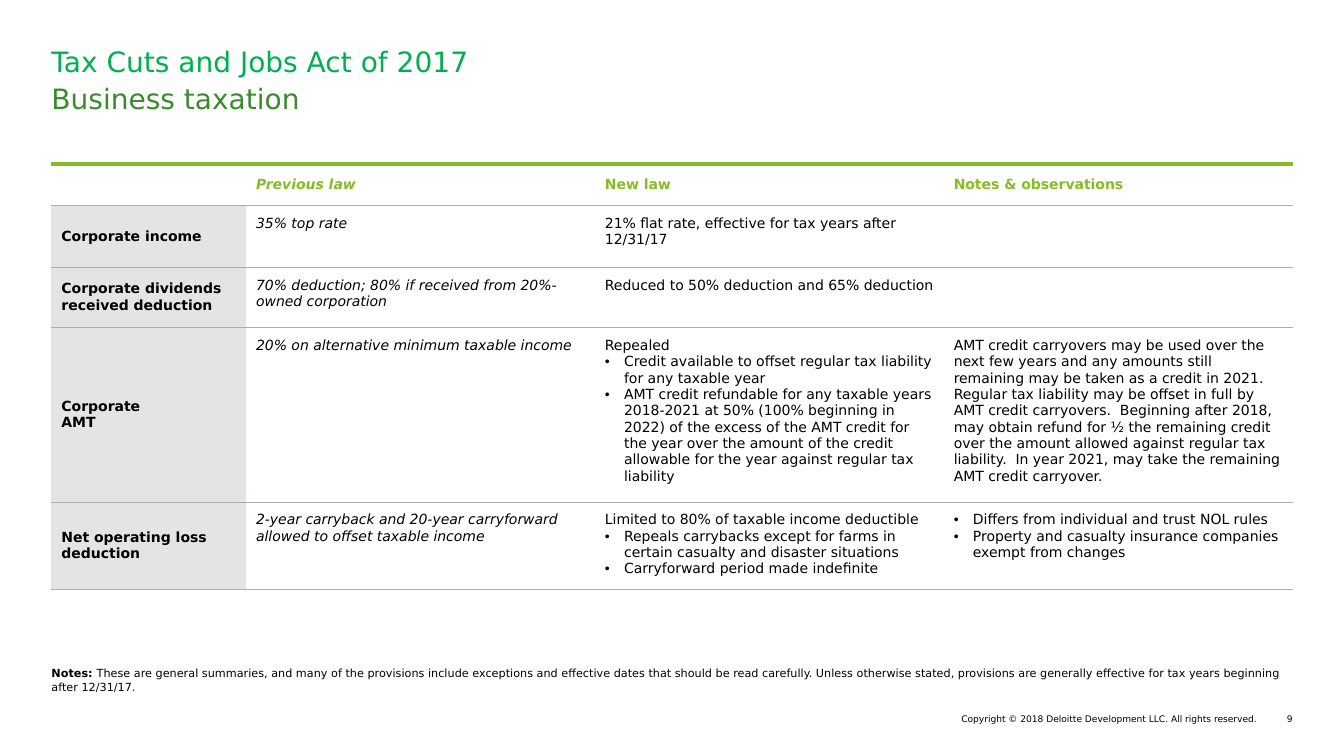
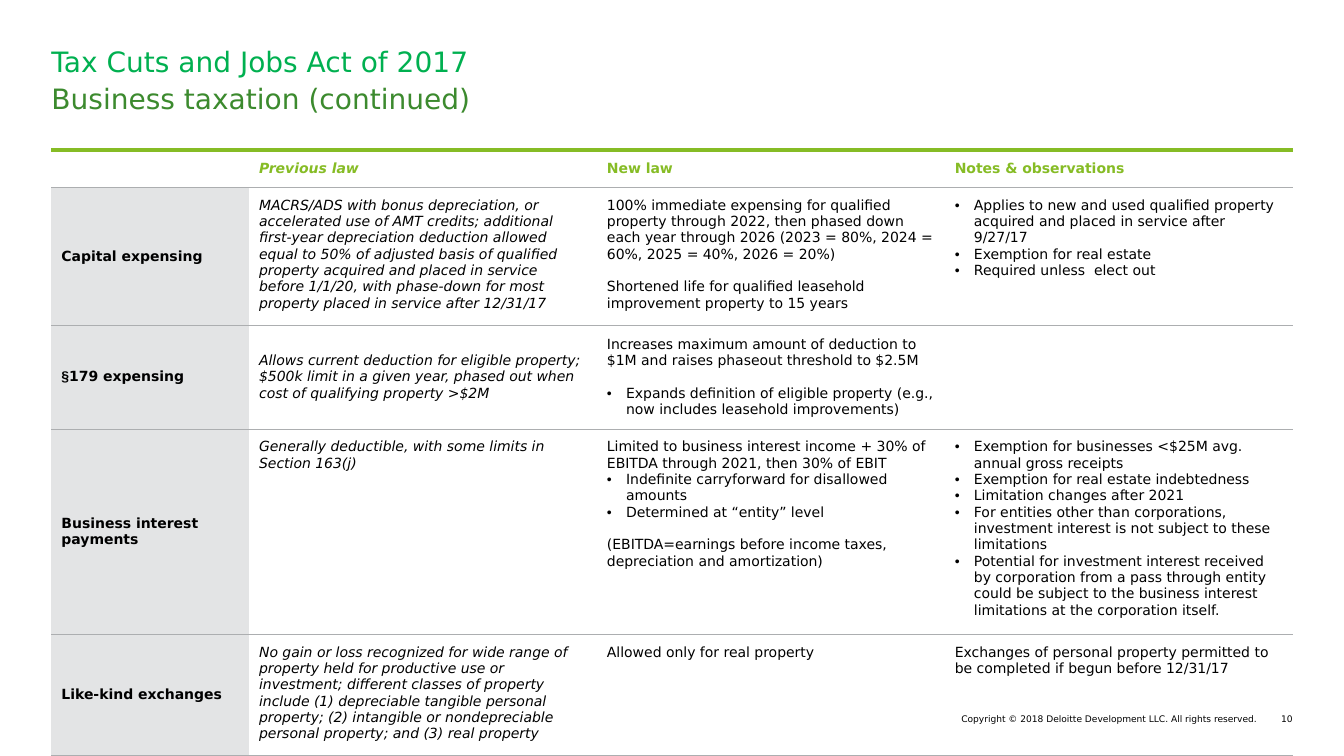
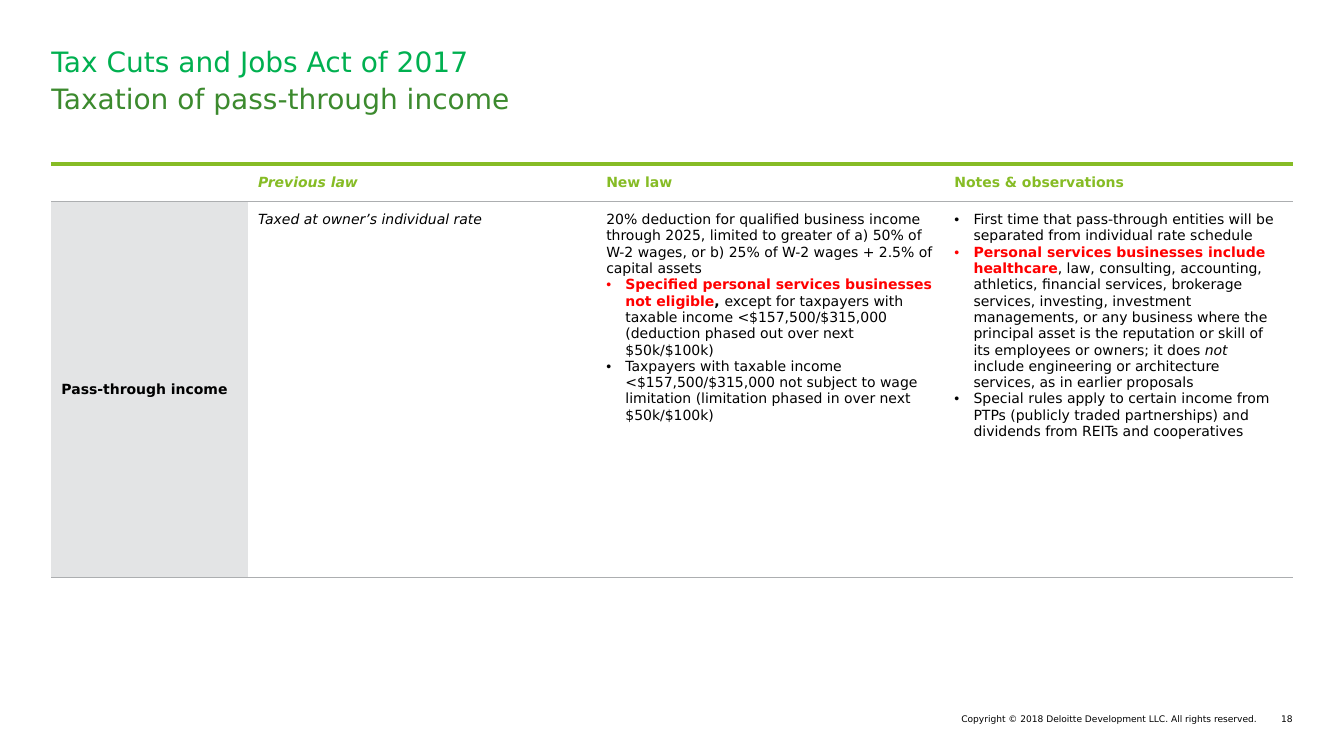
from dataclasses import dataclass

from lxml.etree import SubElement
from pptx import Presentation
from pptx.dml.color import RGBColor
from pptx.enum.text import MSO_ANCHOR as ANCHOR, PP_ALIGN as ALIGN
from pptx.oxml import parse_xml
from pptx.oxml.ns import nsdecls, qn
from pptx.util import Inches, Pt

TITLE_GREEN = RGBColor(0x00, 0xB0, 0x50)
SUBTITLE_GREEN = RGBColor(0x3C, 0x8A, 0x2E)
ACCENT_GREEN = RGBColor(0x86, 0xBC, 0x25)
RULE_GRAY = RGBColor(0xAC, 0xAE, 0xB0)
LABEL_GRAY = RGBColor(0xE3, 0xE4, 0xE5)
BLACK = RGBColor(0x00, 0x00, 0x00)
RED = RGBColor(0xFF, 0x00, 0x00)
FONT = "DejaVu Sans"

LEFT, WIDTH = 0.51, 12.31
INDENT = 0.19
PADDING = 0.1
CELL_SIZE = 10
LINE_GAP = 11.6
TITLE = "Tax Cuts and Jobs Act of 2017"
COPYRIGHT = "Copyright © 2018 Deloitte Development LLC. All rights reserved."
HEADINGS = ["", "Previous law", "New law", "Notes & observations"]


@dataclass
class Para:
    runs: list
    bullet: bool = False
    gap: float = 0


@dataclass
class Row:
    height: float
    cells: list
    anchor: ANCHOR = ANCHOR.TOP


def text(content, **style):
    return content, style


def para(*runs, gap=0):
    return Para([r if isinstance(r, tuple) else text(r) for r in runs], gap=gap)


def bullet(*runs, gap=0):
    return Para(para(*runs).runs, True, gap)


def add_run(p, content, size, color=BLACK, bold=False, italic=False, font=FONT):
    r = p.add_run()
    r.text = content
    r.font.name = font
    r.font.size = Pt(size)
    r.font.bold = bold
    r.font.italic = italic
    r.font.color.rgb = color


def add_text(s, box, runs, size, color=BLACK, align=ALIGN.LEFT,
             anchor=ANCHOR.TOP, inset=0):
    tf = s.shapes.add_textbox(*map(Inches, box)).text_frame
    tf.word_wrap = True
    tf.vertical_anchor = anchor
    tf.margin_left = tf.margin_right = 0
    tf.margin_top = tf.margin_bottom = Inches(inset)
    p = tf.paragraphs[0]
    p.alignment = align
    for content, style in runs:
        add_run(p, content, size, color, **style)


def set_bullet(p):
    pPr = p._p.get_or_add_pPr()
    pPr.set("marL", str(Inches(INDENT)))
    pPr.set("indent", str(-Inches(INDENT)))
    SubElement(pPr, qn("a:buFont"), typeface="Arial")
    SubElement(pPr, qn("a:buChar"), char="•")


def fill_cell(cell, paras, **base):
    tf = cell.text_frame
    tf.word_wrap = True
    if not paras:
        SubElement(tf.paragraphs[0]._p, qn("a:endParaRPr"), sz=str(CELL_SIZE * 100))
    for i, item in enumerate(paras):
        p = tf.add_paragraph() if i else tf.paragraphs[0]
        if item.gap:
            p.space_before = Pt(item.gap)
        if item.bullet:
            set_bullet(p)
        for content, style in item.runs:
            for j, line in enumerate(content.split("\n")):
                if j:
                    p.add_line_break()
                add_run(p, line, CELL_SIZE, **{**base, **style})


def border(side, color=None, width=0):
    if color is None:
        return parse_xml(f'<a:{side} {nsdecls("a")} w="0"><a:noFill/></a:{side}>')
    return parse_xml(
        f'<a:{side} {nsdecls("a")} w="{Pt(width)}"><a:solidFill>'
        f'<a:srgbClr val="{color}"/></a:solidFill></a:{side}>')


def set_borders(cell, is_header):
    top = (ACCENT_GREEN, 3) if is_header else (RULE_GRAY, 0.5)
    lines = [border("lnL"), border("lnR"), border("lnT", *top),
             border("lnB", RULE_GRAY, 0.5)]
    tcPr = cell._tc.get_or_add_tcPr()
    for i, line in enumerate(lines):
        tcPr.insert(i, line)


def format_cell(cell, is_header, is_label, anchor):
    cell.margin_left = cell.margin_right = Inches(PADDING)
    cell.margin_top = cell.margin_bottom = Inches(PADDING)
    cell.vertical_anchor = ANCHOR.MIDDLE if is_header or is_label else anchor
    if is_label and not is_header:
        cell.fill.solid()
        cell.fill.fore_color.rgb = LABEL_GRAY
    else:
        cell.fill.background()
    set_borders(cell, is_header)


def as_paras(content):
    if isinstance(content, str):
        return [para(content)] if content else []
    return content


def add_law_table(s, top, label_width, header_height, rows):
    rows = [Row(header_height, HEADINGS)] + rows
    columns = len(HEADINGS)
    height = sum(row.height for row in rows)
    tbl = s.shapes.add_table(len(rows), columns, Inches(LEFT), Inches(top),
                             Inches(WIDTH), Inches(height)).table
    tbl.first_row = tbl.horz_banding = False
    text_width = (WIDTH - label_width) / (columns - 1)
    for c, column in enumerate(tbl.columns):
        column.width = Inches(text_width if c else label_width)
    for i, row in enumerate(rows):
        tbl.rows[i].height = Inches(row.height)
        for c, content in enumerate(row.cells):
            cell = tbl.cell(i, c)
            is_header, is_label = i == 0, c == 0
            format_cell(cell, is_header, is_label, row.anchor)
            fill_cell(cell, as_paras(content),
                      color=ACCENT_GREEN if is_header else BLACK,
                      bold=is_header or is_label, italic=c == 1)


def add_law_slide(prs, subtitle, number):
    s = prs.slides.add_slide(prs.slide_layouts[6])
    add_text(s, (6.61, 7.08, 5.86, 0.11), [text(COPYRIGHT)], 6.5, align=ALIGN.RIGHT)
    add_text(s, (12.48, 7.08, 0.34, 0.11), [text(str(number))], 6.5, align=ALIGN.RIGHT)
    add_text(s, (LEFT, 0.81, WIDTH, 0.83), [text(subtitle)], 20, SUBTITLE_GREEN)
    add_text(s, (LEFT, 0.44, WIDTH, 0.37), [text(TITLE)], 20, TITLE_GREEN)
    return s


def add_business_slide(prs):
    s = add_law_slide(prs, "Business taxation", 9)
    add_law_table(s, 1.63, 1.93, 0.41, [
        Row(0.61, ["Corporate income", "35% top rate",
                   "21% flat rate, effective for tax years after 12/31/17", ""]),
        Row(0.6, ["Corporate dividends received deduction",
                  "70% deduction; 80% if received from 20%-owned corporation",
                  "Reduced to 50% deduction and 65% deduction", ""]),
        Row(1.73, [
            "Corporate \nAMT",
            "20% on alternative minimum taxable income",
            [para("Repealed"),
             bullet("Credit available to offset regular tax liability for any taxable year"),
             bullet("AMT credit refundable for any taxable years 2018-2021 at 50% (100% "
                    "beginning in 2022) of the excess of the AMT credit for the year over "
                    "the amount of the credit allowable for the year against regular tax "
                    "liability")],
            "AMT credit carryovers may be used over the next few years and any amounts "
            "still remaining may be taken as a credit in 2021.  Regular tax liability may "
            "be offset in full by AMT credit carryovers.  Beginning after 2018, may obtain "
            "refund for ½ the remaining credit over the amount allowed against regular tax "
            "liability.  In year 2021, may take the remaining AMT credit carryover."]),
        Row(0.85, [
            "Net operating loss deduction",
            "2-year carryback and 20-year carryforward allowed to offset taxable income",
            [para("Limited to 80% of taxable income deductible"),
             bullet("Repeals carrybacks except for farms in certain casualty and disaster "
                    "situations"),
             bullet("Carryforward period made indefinite")],
            [bullet("Differs from individual and trust NOL rules"),
             bullet("Property and casualty insurance companies exempt from changes")]]),
    ])
    add_text(s, (LEFT, 6.54, WIDTH, 0.39), [
        text("Notes: ", bold=True),
        text("These are general summaries, and many of the provisions include exceptions "
             "and effective dates that should be read carefully. Unless otherwise stated, "
             "provisions are generally effective for tax years beginning after 12/31/17."),
    ], 8, anchor=ANCHOR.BOTTOM, inset=0.05)


def add_continued_slide(prs):
    s = add_law_slide(prs, "Business taxation (continued)", 10)
    add_law_table(s, 1.49, 1.96, 0.36, [
        Row(1.34, [
            "Capital expensing",
            "MACRS/ADS with bonus depreciation, or accelerated use of AMT credits; "
            "additional first-year depreciation deduction allowed equal to 50% of adjusted "
            "basis of qualified property acquired and placed in service before 1/1/20, with "
            "phase-down for most property placed in service after 12/31/17",
            [para("100% immediate expensing for qualified property through 2022, then "
                  "phased down each year through 2026 (2023 = 80%, 2024 = 60%, 2025 = 40%, "
                  "2026 = 20%)"),
             para("Shortened life for qualified leasehold improvement property to 15 years",
                  gap=LINE_GAP)],
            [bullet("Applies to new and used qualified property acquired and placed in "
                    "service after 9/27/17"),
             bullet("Exemption for real estate"),
             bullet("Required unless  elect out")]]),
        Row(1.0, [
            [para(text("§", font="Arial"), "179 expensing")],
            "Allows current deduction for eligible property; $500k limit in a given year, "
            "phased out when cost of qualifying property >$2M",
            [para("Increases maximum amount of deduction to $1M and raises phaseout "
                  "threshold to $2.5M"),
             bullet("Expands definition of eligible property (e.g., now includes leasehold "
                    "improvements)", gap=LINE_GAP)],
            ""], ANCHOR.MIDDLE),
        Row(1.98, [
            "Business interest payments",
            "Generally deductible, with some limits in Section 163(j)",
            [para("Limited to business interest income + 30% of EBITDA through 2021, then "
                  "30% of EBIT"),
             bullet("Indefinite carryforward for disallowed amounts"),
             bullet("Determined at “entity” level"),
             para("(EBITDA=earnings before income taxes, depreciation and amortization)",
                  gap=LINE_GAP)],
            [bullet("Exemption for businesses <$25M avg. annual gross receipts"),
             bullet("Exemption for real estate indebtedness"),
             bullet("Limitation changes after 2021"),
             bullet("For entities other than corporations, investment interest is not "
                    "subject to these limitations"),
             bullet("Potential for investment interest received by corporation from a pass "
                    "through entity could be subject to the business interest limitations "
                    "at the corporation itself.")]]),
        Row(1.17, [
            "Like-kind exchanges",
            "No gain or loss recognized for wide range of property held for productive use "
            "or investment; different classes of property include (1) depreciable tangible "
            "personal property; (2) intangible or nondepreciable personal property; and (3) "
            "real property",
            "Allowed only for real property",
            "Exchanges of personal property permitted to be completed if begun before "
            "12/31/17"]),
    ])


def add_pass_through_slide(prs):
    s = add_law_slide(prs, "Taxation of pass-through income", 18)
    add_law_table(s, 1.63, 1.95, 0.37, [
        Row(3.73, [
            "Pass-through income",
            "Taxed at owner’s individual rate",
            [para("20% deduction for qualified business income through 2025, limited to "
                  "greater of a) 50% of W-2 wages, or b) 25% of W-2 wages + 2.5% of capital "
                  "assets"),
             bullet(text("Specified personal services businesses not eligible",
                         color=RED, bold=True),
                    text(", ", bold=True),
                    "except for taxpayers with taxable income <$157,500/$315,000 (deduction "
                    "phased out over next $50k/$100k)"),
             bullet("Taxpayers with taxable income <$157,500/$315,000 not subject to wage "
                    "limitation (limitation phased in over next $50k/$100k)")],
            [bullet("First time that pass-through entities will be separated from "
                    "individual rate schedule"),
             bullet(text("Personal services businesses include healthcare",
                         color=RED, bold=True),
                    ", law, consulting, accounting, athletics, financial services, "
                    "brokerage services, investing, investment managements, or any business "
                    "where the principal asset is the reputation or skill of its employees "
                    "or owners; it does ",
                    text("not", italic=True),
                    " include engineering or architecture services, as in earlier "
                    "proposals"),
             bullet("Special rules apply to certain income from PTPs (publicly traded "
                    "partnerships) and dividends from REITs and cooperatives")]]),
    ])


def main():
    prs = Presentation()
    prs.slide_width = Inches(13.33)
    prs.slide_height = Inches(7.5)
    add_business_slide(prs)
    add_continued_slide(prs)
    add_pass_through_slide(prs)
    prs.save("out.pptx")


if __name__ == "__main__":
    main()
